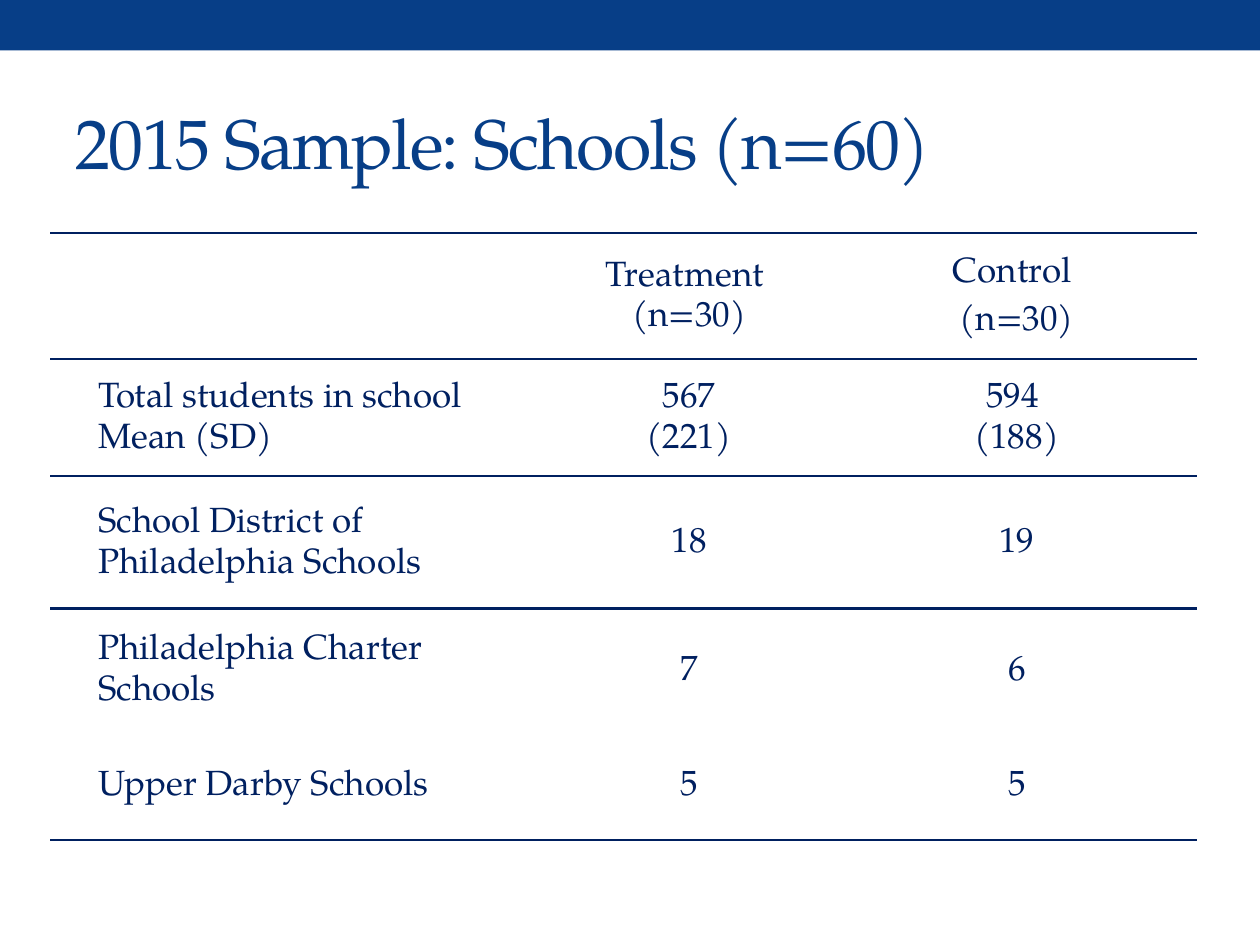
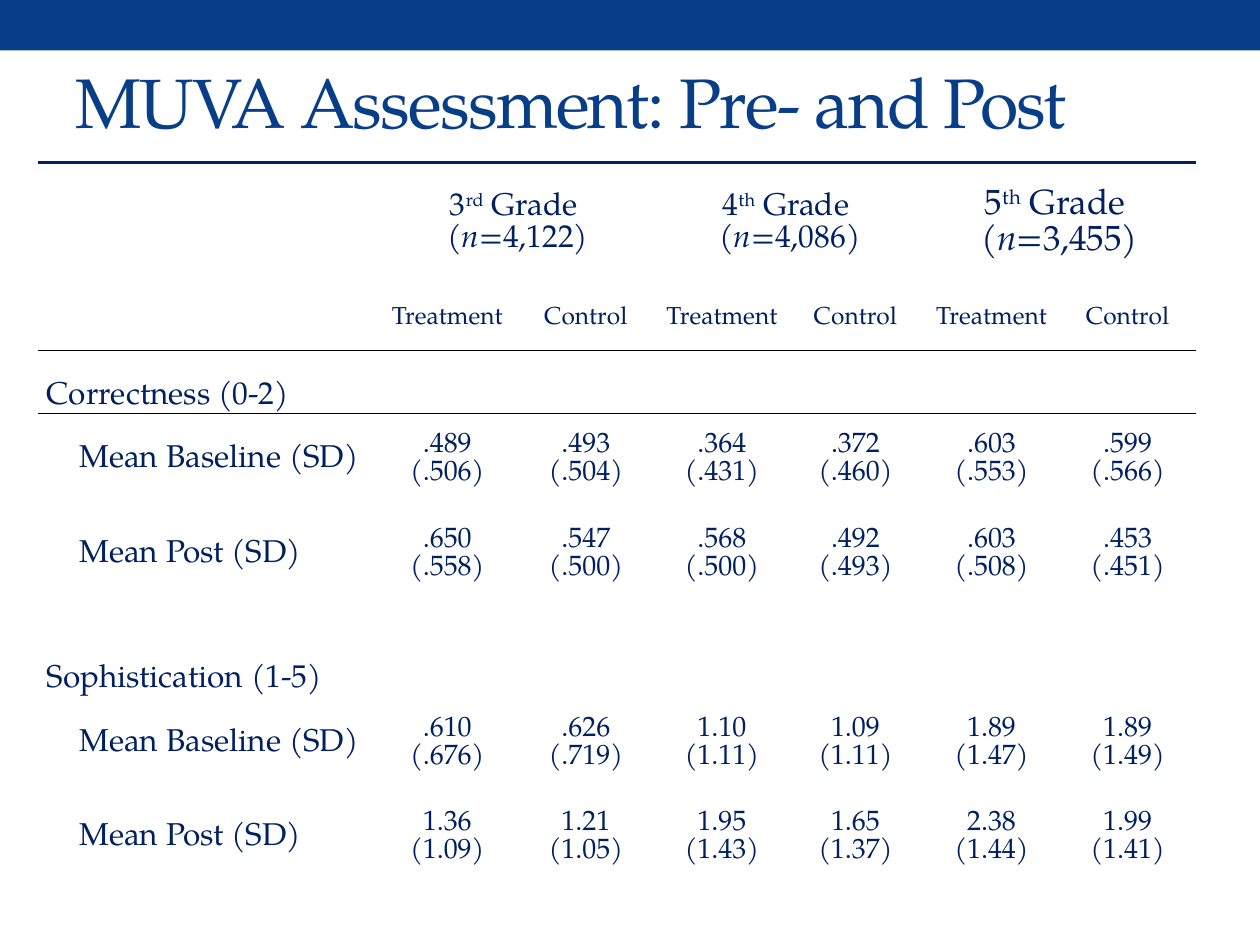
from lxml.etree import SubElement
from pptx import Presentation
from pptx.dml.color import RGBColor
from pptx.enum.shapes import MSO_SHAPE
from pptx.enum.text import MSO_ANCHOR as Anchor, MSO_AUTO_SIZE, PP_ALIGN as Align
from pptx.oxml import parse_xml
from pptx.oxml.ns import nsdecls, qn
from pptx.util import Inches, Pt

COLORS = {"band": "073E87", "text": "002060", "black": "000000"}
FONT = "TeX Gyre Pagella"
PLAIN_TABLE = "{2D5ABB26-0587-4C30-8999-92F81FD0307C}"
TITLE_ONLY = 5

SCHOOL_ROWS = [
    ("Total students in school Mean (SD)", "567\n(221)", "594 \n(188)"),
    ("School District of Philadelphia Schools", "18", "19"),
    ("Philadelphia Charter Schools", "7", "6"),
    ("Upper Darby Schools", "5", "5"),
]
GRADES = [("3", "rd", "4,122", 18), ("4", "th", "4,086", 18), ("5", "th", "3,455", 20)]
SCORES = [
    ("Correctness (0-2)", [
        ("Mean Baseline (SD)", [".489 (.506)", ".493 (.504)", ".364 (.431)",
                                ".372 (.460)", ".603 (.553)", ".599 (.566)"]),
        ("Mean Post (SD)", [".650 (.558)", ".547 (.500)", ".568 (.500)",
                            ".492 (.493)", ".603 (.508)", ".453 (.451)"]),
    ]),
    ("Sophistication (1-5)", [
        ("Mean Baseline (SD)", [".610 (.676)", ".626 (.719)", "1.10 (1.11)",
                                "1.09 (1.11)", "1.89 (1.47)", "1.89 (1.49)"]),
        ("Mean Post (SD)", ["1.36 (1.09)", "1.21 (1.05)", "1.95 (1.43)",
                            "1.65 (1.37)", "2.38 (1.44)", "1.99 (1.41)"]),
    ]),
]


def rgb(name):
    """Return the named colour."""
    return RGBColor.from_string(COLORS[name])


def style_font(font, size, color):
    """Apply the shared typeface with a size and colour."""
    font.name, font.size = FONT, Pt(size)
    font.color.rgb = rgb(color)


def add_titled_slide(presentation, title, top):
    """Add a slide with the top band and a title at the given height."""
    slide = presentation.slides.add_slide(presentation.slide_layouts[TITLE_ONLY])
    band = slide.shapes.add_shape(
        MSO_SHAPE.RECTANGLE, 0, 0, presentation.slide_width, Inches(0.4))
    band.shadow.inherit = False
    band.fill.solid()
    band.fill.fore_color.rgb = rgb("band")
    band.line.fill.background()

    placeholder = slide.shapes.title
    placeholder.left, placeholder.top = Inches(0.5), Inches(top)
    placeholder.width, placeholder.height = Inches(9), Inches(1.08)
    frame = placeholder.text_frame
    frame.text = title
    frame.vertical_anchor = Anchor.MIDDLE
    frame.auto_size = MSO_AUTO_SIZE.NONE
    paragraph = frame.paragraphs[0]
    paragraph.alignment = Align.LEFT
    style_font(paragraph.font, 40, "band")
    paragraph.runs[0]._r.get_or_add_rPr().set("spc", "-100")
    return slide


def add_plain_table(slide, left, top, widths, heights):
    """Add an unstyled table with the given column widths and row heights."""
    table = slide.shapes.add_table(
        len(heights), len(widths), Inches(left), Inches(top),
        Inches(sum(widths)), Inches(sum(heights))).table
    table.first_row = table.horz_banding = False
    table._tbl.tblPr.find(qn("a:tableStyleId")).text = PLAIN_TABLE
    for column, width in zip(table.columns, widths):
        column.width = Inches(width)
    for row, height in zip(table.rows, heights):
        row.height = Inches(height)
    for cell in table.iter_cells():
        cell.fill.background()
        cell.margin_left = cell.margin_right = Inches(0.07)
        cell.margin_top = cell.margin_bottom = 0
        cell.vertical_anchor = Anchor.MIDDLE
    return table


def rule_table(table, boundary, color="text", width=1.5):
    """Draw a horizontal rule above a row, or below the last one."""
    at_end = boundary == len(table.rows)
    side = "lnB" if at_end else "lnT"
    for cell in table.rows[boundary - at_end].cells:
        line = parse_xml(
            f'<a:{side} {nsdecls("a")} w="{Pt(width)}"><a:solidFill>'
            f'<a:srgbClr val="{COLORS[color]}"/></a:solidFill></a:{side}>')
        cell._tc.get_or_add_tcPr().insert(0, line)


def add_runs(paragraph, runs):
    """Add (text, style) runs, where style is plain, italic or super."""
    for text, style in runs:
        run = paragraph.add_run()
        run.text = text
        if style == "italic":
            run.font.italic = True
        elif style == "super":
            run._r.get_or_add_rPr().set("baseline", "30000")


def write_cell(cell, paragraphs, size, align=Align.CENTER, indent=0, spacing=1, gap=0):
    """Write paragraphs, each a string or a list of runs, into a cell."""
    frame = cell.text_frame
    for index, content in enumerate(paragraphs):
        paragraph = frame.add_paragraph() if index else frame.paragraphs[0]
        if isinstance(content, str):
            paragraph.text = content
        else:
            add_runs(paragraph, content)
        paragraph.alignment = align
        paragraph.line_spacing = spacing
        if index:
            paragraph.space_before = Pt(gap)
        if indent:
            properties = paragraph._p.get_or_add_pPr()
            properties.set("marL", str(Inches(indent)))
            properties.set("indent", "0")
            SubElement(properties, qn("a:buNone"))
        style_font(paragraph.font, size, "text")


def add_schools_slide(presentation):
    """Build the slide on the sample of schools."""
    slide = add_titled_slide(presentation, "2015 Sample: Schools (n=60)", 0.58)
    table = add_plain_table(slide, 0.4, 1.85, [3.9, 2.34, 2.86],
                            [1, 0.93, 1.05, 0.97, 0.87])
    write_cell(table.cell(0, 1), ["Treatment \n(n=30)"], 20, spacing=1.15)
    write_cell(table.cell(0, 2), ["Control ", "(n=30)"], 20, spacing=1.15, gap=4.8)
    for row, (label, *values) in enumerate(SCHOOL_ROWS, 1):
        write_cell(table.cell(row, 0), [label], 20, Align.LEFT, 0.31, 1.15)
        for column, value in enumerate(values, 1):
            write_cell(table.cell(row, column), [value], 20, spacing=1.15)
    for boundary in (0, 1, 2, 5):
        rule_table(table, boundary)


def add_assessment_slide(presentation):
    """Build the slide on assessment scores by grade."""
    slide = add_titled_slide(presentation, "MUVA Assessment: Pre- and Post", 0.26)
    table = add_plain_table(slide, 0.3, 1.29,
                            [2.71, 1.08, 1.12, 1.04, 1.08, 1.08, 1.08],
                            [0.99, 0.5, 0.5] + [0.75] * 5)
    for index, (grade, suffix, count, size) in enumerate(GRADES):
        column = 1 + 2 * index
        heading = table.cell(0, column)
        heading.merge(table.cell(0, column + 1))
        write_cell(heading, [
            [(grade, "plain"), (suffix, "super"), (" Grade ", "plain")],
            [("(", "plain"), ("n", "italic"), (f"={count})", "plain")]], size)
        for offset, group in enumerate(("Treatment", "Control")):
            write_cell(table.cell(1, column + offset), [group], 14)

    row = 2
    for section, measures in SCORES:
        write_cell(table.cell(row, 0), [section], 18, Align.LEFT)
        table.cell(row, 0).vertical_anchor = Anchor.BOTTOM
        for row, (label, values) in enumerate(measures, row + 1):
            write_cell(table.cell(row, 0), [label], 18, Align.LEFT, 0.26)
            for column, value in enumerate(values, 1):
                write_cell(table.cell(row, column), [value], 16)
        row += 1
    rule_table(table, 0)
    rule_table(table, 2, "black", 1)


def main():
    """Build and save the presentation."""
    presentation = Presentation()
    presentation.slide_width, presentation.slide_height = Inches(10), Inches(7.5)
    add_schools_slide(presentation)
    add_assessment_slide(presentation)
    presentation.save("out.pptx")


if __name__ == "__main__":
    main()
